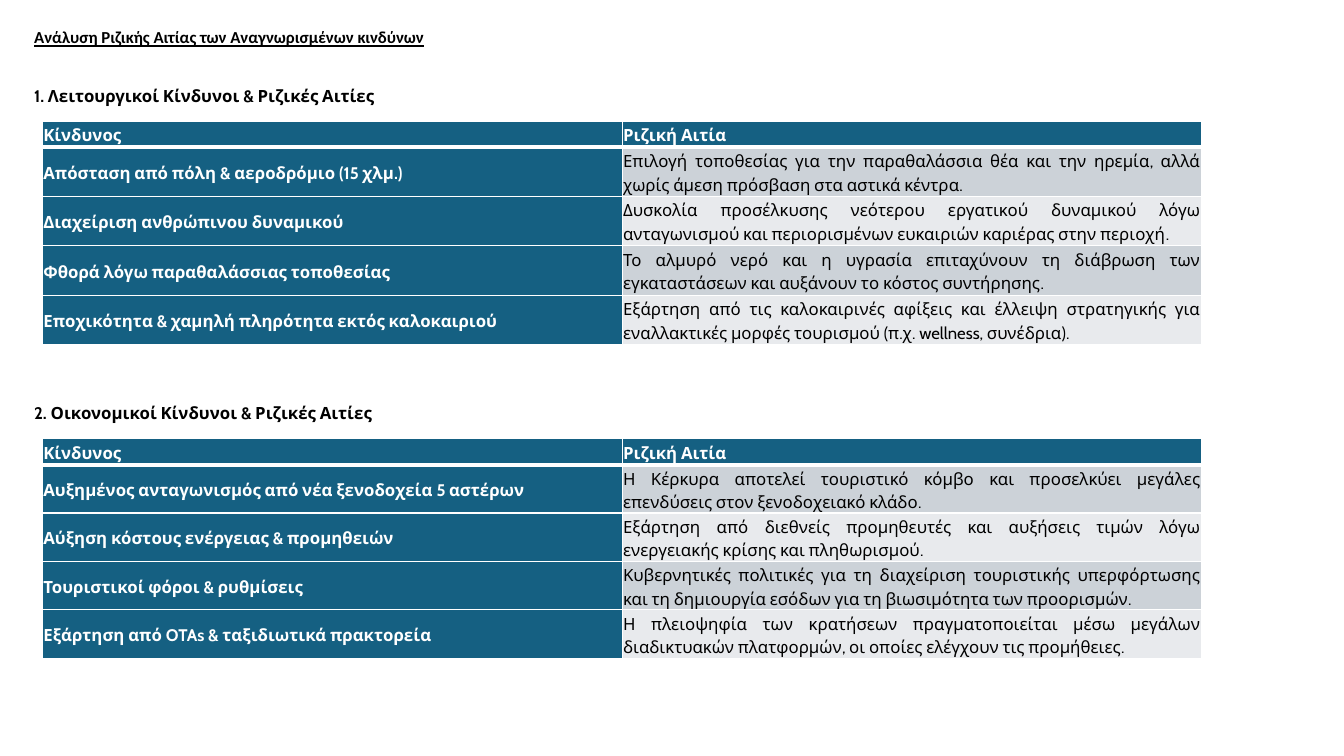
from lxml.etree import SubElement
from pptx import Presentation
from pptx.dml.color import RGBColor
from pptx.enum.text import MSO_ANCHOR, PP_ALIGN
from pptx.oxml.ns import qn
from pptx.util import Inches, Pt

THEME = {
    "font": "Cabin", "title_font": "Calibri", "size": Pt(12),
    "black": "000000", "white": "FFFFFF", "blue": "156082",
    "bands": ("CCD2D8", "E8EAED"),
}
MARGIN, TABLE_LEFT = Inches(0.24), Inches(0.42)
COLUMN_WIDTH = Inches(5.75)
HEADING_HEIGHT, HEADER_HEIGHT = Inches(0.5), Inches(0.26)
CELL_FORMAT = {
    "vertical_anchor": MSO_ANCHOR.MIDDLE,
    "margin_left": Inches(0.01), "margin_right": Inches(0.01),
    "margin_top": Inches(0.01), "margin_bottom": Inches(0.01),
}
PARAGRAPH_FORMAT = {
    "alignment": PP_ALIGN.JUSTIFY, "line_spacing": 1.15, "space_after": Pt(8),
}
HEADER = ("Κίνδυνος", "Ριζική Αιτία")
SECTIONS = [
    {
        "heading": "1. Λειτουργικοί Κίνδυνοι & Ριζικές Αιτίες",
        "top": Inches(0.7), "row_height": Inches(0.49),
        "risks": [
            ("Απόσταση από πόλη & αεροδρόμιο (15 χλμ.)",
             "Επιλογή τοποθεσίας για την παραθαλάσσια θέα και την ηρεμία, αλλά "
             "χωρίς άμεση πρόσβαση στα αστικά κέντρα."),
            ("Διαχείριση ανθρώπινου δυναμικού",
             "Δυσκολία προσέλκυσης νεότερου εργατικού δυναμικού λόγω "
             "ανταγωνισμού και περιορισμένων ευκαιριών καριέρας στην περιοχή."),
            ("Φθορά λόγω παραθαλάσσιας τοποθεσίας",
             "Το αλμυρό νερό και η υγρασία επιταχύνουν τη διάβρωση των "
             "εγκαταστάσεων και αυξάνουν το κόστος συντήρησης."),
            ("Εποχικότητα & χαμηλή πληρότητα εκτός καλοκαιριού",
             "Εξάρτηση από τις καλοκαιρινές αφίξεις και έλλειψη στρατηγικής για "
             "εναλλακτικές μορφές τουρισμού (π.χ. wellness, συνέδρια)."),
        ],
    },
    {
        "heading": "2. Οικονομικοί Κίνδυνοι & Ριζικές Αιτίες",
        "top": Inches(3.85), "row_height": Inches(0.48),
        "risks": [
            ("Αυξημένος ανταγωνισμός από νέα ξενοδοχεία 5 αστέρων",
             "Η Κέρκυρα αποτελεί τουριστικό κόμβο και προσελκύει μεγάλες "
             "επενδύσεις στον ξενοδοχειακό κλάδο."),
            ("Αύξηση κόστους ενέργειας & προμηθειών",
             "Εξάρτηση από διεθνείς προμηθευτές και αυξήσεις τιμών λόγω "
             "ενεργειακής κρίσης και πληθωρισμού."),
            ("Τουριστικοί φόροι & ρυθμίσεις",
             "Κυβερνητικές πολιτικές για τη διαχείριση τουριστικής υπερφόρτωσης "
             "και τη δημιουργία εσόδων για τη βιωσιμότητα των προορισμών."),
            ("Εξάρτηση από OTAs & ταξιδιωτικά πρακτορεία",
             "Η πλειοψηφία των κρατήσεων πραγματοποιείται μέσω μεγάλων "
             "διαδικτυακών πλατφορμών, οι οποίες ελέγχουν τις προμήθειες."),
        ],
    },
]


def write(text_frame, text, color, **font_format):
    """Write one run in the theme's type and return its paragraph."""
    paragraph = text_frame.paragraphs[0]
    run = paragraph.add_run()
    run.text = text
    settings = {"name": THEME["font"], "size": THEME["size"], "bold": True}
    for name, value in (settings | font_format).items():
        setattr(run.font, name, value)
    run.font.color.rgb = RGBColor.from_string(color)
    return paragraph


def add_borders(cell, bottom_width):
    """Draw white lines on all four sides of a cell."""
    properties = cell._tc.get_or_add_tcPr()
    widths = {"L": Pt(1), "R": Pt(1), "T": Pt(1), "B": bottom_width}
    for side, width in widths.items():
        line = SubElement(properties, qn(f"a:ln{side}"), w=str(width))
        fill = SubElement(line, qn("a:solidFill"))
        SubElement(fill, qn("a:srgbClr"), val=THEME["white"])


presentation = Presentation()
presentation.slide_width, presentation.slide_height = Inches(13.33), Inches(7.5)
slide = presentation.slides.add_slide(presentation.slide_layouts[6])
text_width = presentation.slide_width - MARGIN

# Title
title = slide.shapes.add_textbox(MARGIN, Inches(0.22), text_width, Inches(0.4))
title.text_frame.word_wrap = True
write(title.text_frame, "Ανάλυση Ριζικής Αιτίας των Αναγνωρισμένων κινδύνων",
      THEME["black"], name=THEME["title_font"], underline=True)

for section in SECTIONS:
    # Section heading
    heading = slide.shapes.add_textbox(
        MARGIN, section["top"], text_width, HEADING_HEIGHT)
    heading.text_frame.word_wrap = True
    heading.text_frame.vertical_anchor = MSO_ANCHOR.MIDDLE
    write(heading.text_frame, section["heading"], THEME["black"])

    # Table of risks and root causes
    rows = [HEADER, *section["risks"]]
    row_heights = [HEADER_HEIGHT] + [section["row_height"]] * len(section["risks"])
    table = slide.shapes.add_table(
        len(rows), len(HEADER), TABLE_LEFT, section["top"] + HEADING_HEIGHT,
        COLUMN_WIDTH * len(HEADER), sum(row_heights)).table
    for column in table.columns:
        column.width = COLUMN_WIDTH
    for row_index, texts in enumerate(rows):
        table.rows[row_index].height = row_heights[row_index]
        for column_index, text in enumerate(texts):
            cell = table.cell(row_index, column_index)
            is_label = row_index == 0 or column_index == 0
            for name, value in CELL_FORMAT.items():
                setattr(cell, name, value)
            add_borders(cell, Pt(3) if row_index == 0 else Pt(1))
            cell.fill.solid()
            cell.fill.fore_color.rgb = RGBColor.from_string(
                THEME["blue"] if is_label else THEME["bands"][(row_index - 1) % 2])
            paragraph = write(cell.text_frame, text,
                              THEME["white"] if is_label else THEME["black"],
                              bold=is_label)
            for name, value in PARAGRAPH_FORMAT.items():
                setattr(paragraph, name, value)

presentation.save("out.pptx")
